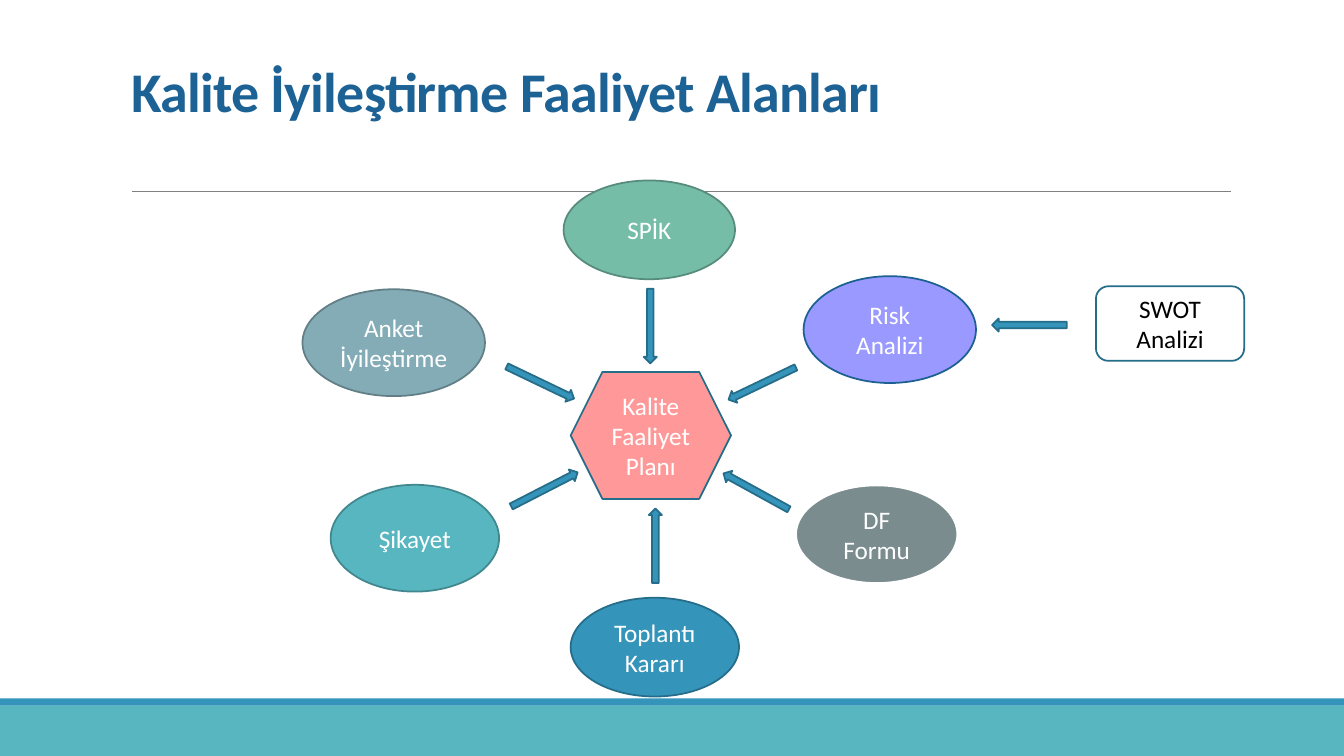
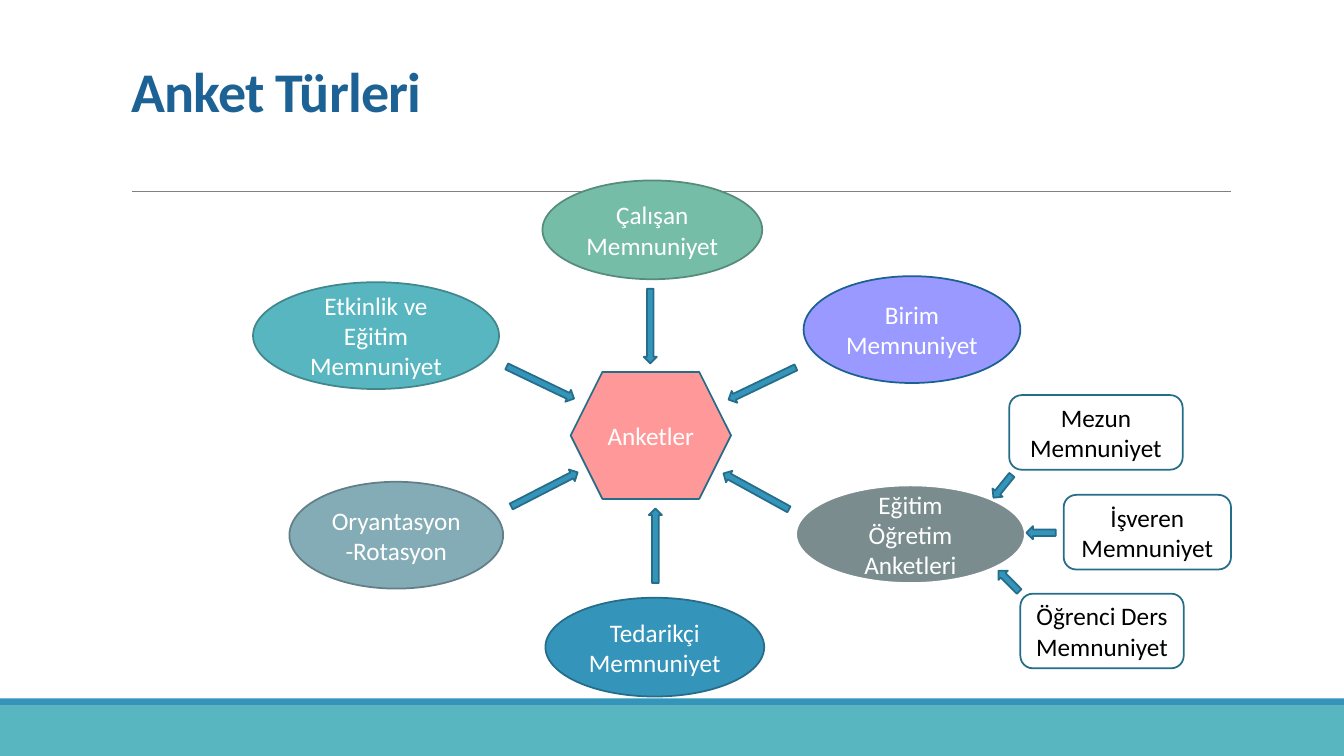
from pptx import Presentation
from pptx.dml.color import RGBColor
from pptx.enum.shapes import MSO_CONNECTOR, MSO_SHAPE
from pptx.enum.text import MSO_ANCHOR, MSO_AUTO_SIZE, PP_ALIGN
from pptx.oxml.ns import qn
from pptx.util import Inches, Pt
from lxml import etree

FONT = "Calibri"
WHITE = RGBColor(0xFF, 0xFF, 0xFF)
BLACK = RGBColor(0x00, 0x00, 0x00)
GRAY = RGBColor(0x80, 0x80, 0x80)
TITLE_BLUE = RGBColor(0x1D, 0x62, 0x95)
BLUE = RGBColor(0x34, 0x94, 0xBA)
DARK_BLUE = RGBColor(0x26, 0x6D, 0x8A)
TEAL = RGBColor(0x58, 0xB6, 0xC0)
DARK_TEAL = RGBColor(0x41, 0x87, 0x8E)
STEEL = RGBColor(0x84, 0xAC, 0xB6)
DARK_STEEL = RGBColor(0x62, 0x7F, 0x87)
GREEN = RGBColor(0x75, 0xBD, 0xA7)
DARK_GREEN = RGBColor(0x57, 0x8C, 0x7C)
VIOLET = RGBColor(0x99, 0x99, 0xFF)
DARK_VIOLET = RGBColor(0x1C, 0x61, 0x92)
SLATE = RGBColor(0x7A, 0x8C, 0x8E)
PINK = RGBColor(0xFF, 0x99, 0x99)

# Fill, outline colour and outline width of each ellipse
TEAL_STYLE = (TEAL, DARK_TEAL, 1.25)
STEEL_STYLE = (STEEL, DARK_STEEL, 1.25)
GREEN_STYLE = (GREEN, DARK_GREEN, 1.25)
VIOLET_STYLE = (VIOLET, DARK_VIOLET, 1.25)
SLATE_STYLE = (SLATE, WHITE, 2)
BLUE_STYLE = (BLUE, DARK_BLUE, 1.25)

# Arrows: left, top, width, rotation
HUB_ARROWS = [
    (7.19, 3.74, 0.74, 334.4),
    (7.13, 4.81, 0.74, 28.8),
    (4.99, 3.73, 0.74, 205.6),
    (5.03, 4.79, 0.74, 152.8),
    (6.13, 5.35, 0.74, 90),
    (6.08, 3.17, 0.74, 270),
]
ARROW_HEIGHT = 0.13
SOURCE_HEIGHT = 0.74

# Areas: text, left, top, width, height, style
# Sources: text, left, top, width
DIAGRAMS = [
    {
        "title": "Kalite İyileştirme Faaliyet Alanları",
        "hub": "Kalite Faaliyet Planı",
        "areas": [
            ("Şikayet", 3.28, 4.81, 1.67, 1.06, TEAL_STYLE),
            ("Anket İyileştirme", 3, 2.87, 1.81, 1.06, STEEL_STYLE),
            ("SPİK", 5.59, 1.79, 1.7, 0.98, GREEN_STYLE),
            ("Risk Analizi", 7.97, 2.74, 1.71, 1.06, VIOLET_STYLE),
            ("DF Formu", 7.89, 4.81, 1.61, 0.98, SLATE_STYLE),
            ("Toplantı Kararı", 5.66, 5.93, 1.67, 0.98, BLUE_STYLE),
        ],
        "sources": [("SWOT Analizi", 10.87, 2.84, 1.47)],
        "source_arrows": [(9.84, 3.16, 0.74, 0)],
    },
    {
        "title": "Anket Türleri",
        "hub": "Anketler",
        "areas": [
            ("Etkinlik ve Eğitim Memnuniyet", 2.51, 2.8, 2.44, 1.06, TEAL_STYLE),
            ("Oryantasyon-Rotasyon", 2.87, 4.78, 2.12, 1.06, STEEL_STYLE),
            ("Çalışan Memnuniyet", 5.38, 1.79, 2.18, 0.98, GREEN_STYLE),
            ("Birim Memnuniyet", 7.97, 2.74, 2.15, 1.06, VIOLET_STYLE),
            ("Eğitim Öğretim Anketleri", 7.89, 4.81, 2.28, 0.98, SLATE_STYLE),
            ("Tedarikçi Memnuniyet", 5.41, 5.93, 2.17, 0.98, BLUE_STYLE),
        ],
        "sources": [
            ("Mezun Memnuniyet", 10.01, 3.92, 1.72),
            ("İşveren Memnuniyet", 10.55, 4.91, 1.66),
            ("Öğrenci Ders Memnuniyet", 10.12, 5.89, 1.62),
        ],
        "source_arrows": [
            (9.8, 4.76, 0.29, 309),
            (9.86, 5.7, 0.29, 45.4),
            (10.18, 5.22, 0.29, 0),
        ],
    },
]


def add_figure(slide, kind, left, top, width, height, fill, line=None, line_width=1.25):
    """Add a flat preset shape; a fill or line of None is left out."""
    figure = slide.shapes.add_shape(
        kind, Inches(left), Inches(top), Inches(width), Inches(height))
    figure.shadow.inherit = False
    if fill is None:
        figure.fill.background()
    else:
        figure.fill.solid()
        figure.fill.fore_color.rgb = fill
    if line is None:
        figure.line.fill.background()
    else:
        figure.line.color.rgb = line
        figure.line.width = Pt(line_width)
    return figure


def write_label(figure, text, color):
    frame = figure.text_frame
    frame.text = text
    frame.word_wrap = True
    frame.vertical_anchor = MSO_ANCHOR.MIDDLE
    label = frame.paragraphs[0]
    label.alignment = PP_ALIGN.CENTER
    font = label.runs[0].font
    font.name = FONT
    font.size = Pt(18)
    font.color.rgb = color


prs = Presentation()
prs.slide_width = Inches(13.33)
prs.slide_height = Inches(7.5)

for diagram in DIAGRAMS:
    slide = prs.slides.add_slide(prs.slide_layouts[5])

    # Bands and title rule
    add_figure(slide, MSO_SHAPE.RECTANGLE, 0, 7, 13.33, 0.5, TEAL)
    add_figure(slide, MSO_SHAPE.RECTANGLE, 0, 6.93, 13.33, 0.07, BLUE)
    title_rule = slide.shapes.add_connector(
        MSO_CONNECTOR.STRAIGHT, Inches(1.31), Inches(1.9), Inches(12.21), Inches(1.9))
    title_rule.line.color.rgb = GRAY
    title_rule.line.width = Pt(0.5)
    etree.SubElement(title_rule._element.spPr, qn("a:effectLst"))

    # Title
    title = slide.shapes.title
    title.left, title.top = Inches(1.2), Inches(0.31)
    title.width, title.height = Inches(11), Inches(0.97)
    title.text_frame.text = diagram["title"]
    title.text_frame.auto_size = MSO_AUTO_SIZE.NONE
    title.text_frame.vertical_anchor = MSO_ANCHOR.BOTTOM
    heading = title.text_frame.paragraphs[0]
    heading.alignment = PP_ALIGN.LEFT
    heading.line_spacing = 0.85
    heading_font = heading.runs[0].font
    heading_font.name = FONT
    heading_font.size = Pt(40)
    heading_font.bold = True
    heading_font.color.rgb = TITLE_BLUE
    heading.runs[0]._r.get_or_add_rPr().set("spc", "-50")

    # Hub and the areas around it
    hub = add_figure(slide, MSO_SHAPE.HEXAGON, 5.66, 3.69, 1.59, 1.26, PINK, DARK_BLUE)
    write_label(hub, diagram["hub"], WHITE)
    for text, left, top, width, height, style in diagram["areas"]:
        area = add_figure(slide, MSO_SHAPE.OVAL, left, top, width, height, *style)
        write_label(area, text, WHITE)

    # Sources that feed one area
    for text, left, top, width in diagram["sources"]:
        source = add_figure(slide, MSO_SHAPE.ROUNDED_RECTANGLE, left, top, width,
                            SOURCE_HEIGHT, None, DARK_BLUE)
        write_label(source, text, BLACK)

    for left, top, width, rotation in HUB_ARROWS + diagram["source_arrows"]:
        arrow = add_figure(slide, MSO_SHAPE.LEFT_ARROW, left, top, width,
                           ARROW_HEIGHT, BLUE, DARK_BLUE)
        arrow.rotation = rotation

prs.save("out.pptx")
